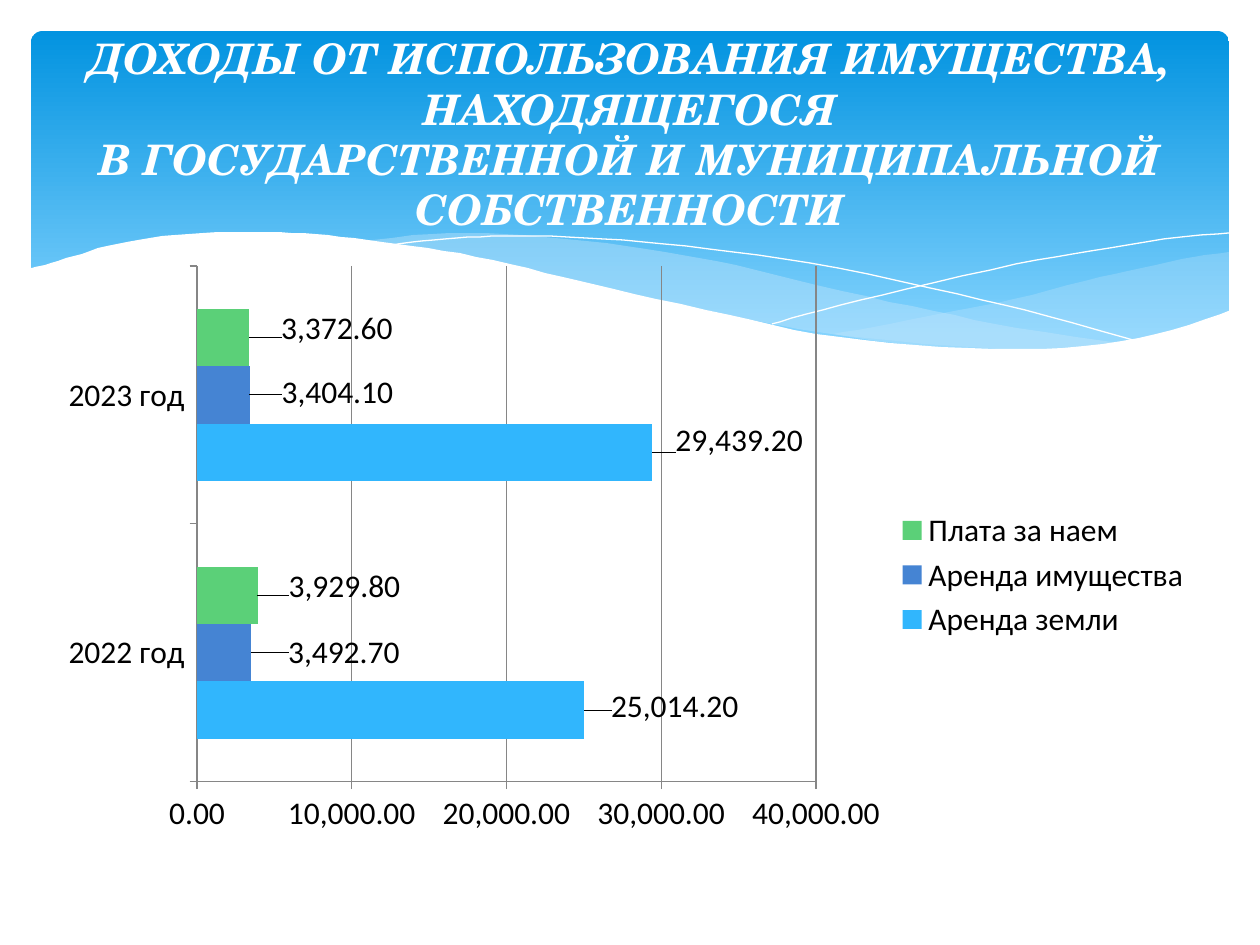
from lxml import etree
from pptx import Presentation
from pptx.chart.data import CategoryChartData
from pptx.dml.color import RGBColor
from pptx.enum.chart import XL_CHART_TYPE, XL_LABEL_POSITION, XL_LEGEND_POSITION, XL_TICK_MARK
from pptx.enum.shapes import MSO_SHAPE
from pptx.enum.text import MSO_ANCHOR, PP_ALIGN
from pptx.oxml.ns import qn
from pptx.util import Pt

BAR = XL_CHART_TYPE.BAR_CLUSTERED
OUTSIDE_END = XL_LABEL_POSITION.OUTSIDE_END
LEGEND_RIGHT = XL_LEGEND_POSITION.RIGHT
TICK_OUTSIDE = XL_TICK_MARK.OUTSIDE
ROUNDED = MSO_SHAPE.ROUNDED_RECTANGLE
MIDDLE = MSO_ANCHOR.MIDDLE
CENTER = PP_ALIGN.CENTER

PX = 914400 // 126
COLORS = {
    "banner_top": "0293E0", "banner_bottom": "83D3FE", "wave": "C6E7FC",
    "white": "FFFFFF", "text": "000000", "axis": "868686",
    "land": "31B6FD", "property": "4584D3", "rent": "5BD078",
}
TITLE = [
    "ДОХОДЫ ОТ ИСПОЛЬЗОВАНИЯ ИМУЩЕСТВА, НАХОДЯЩЕГОСЯ",
    "В ГОСУДАРСТВЕННОЙ И МУНИЦИПАЛЬНОЙ СОБСТВЕННОСТИ",
]
YEARS = ["2022 год", "2023 год"]
NUMBER_FORMAT = "#,##0.00"
SERIES = [
    ("Аренда земли", "land", [25014.2, 29439.2], [(22, -4), (18, -12)]),
    ("Аренда имущества", "property", [3492.7, 3404.1], [(32, 0), (27, -3)]),
    ("Плата за наем", "rent", [3929.8, 3372.6], [(26, -9), (27, -9)]),
]
CHART = (44, 254, 1170, 590)
PLOT = (197, 266, 619, 516)
LEGEND = (895, 505, 296, 140)

RIGHT_WAVE = [
    [(1229, 252), (1194, 257), (1142, 268), (1085, 281), (1014, 299), (949, 312),
     (890, 324), (833, 334)],
    [(833, 334), (906, 342), (969, 347), (1026, 350), (1077, 348), (1130, 342),
     (1178, 330), (1229, 311)],
]
MIDDLE_WAVE = [
    [(1125, 344), (1017, 328), (934, 311), (842, 291), (736, 265), (665, 252),
     (586, 241), (503, 234), (433, 234), (360, 241)],
    [(360, 241), (431, 251), (509, 266), (566, 280), (668, 302), (757, 321),
     (838, 335), (911, 345), (974, 349), (1030, 350), (1080, 348), (1125, 344)],
]
FALLING_LINE = [
    [(389, 246), (413, 242), (457, 238), (505, 236), (567, 237), (643, 242),
     (733, 252), (838, 268), (958, 294), (1047, 316), (1143, 343)],
]
RISING_LINE = [
    [(772, 324), (823, 310), (907, 289), (1016, 264), (1091, 251), (1164, 239),
     (1229, 233)],
]
WHITE_WAVE = [
    [(1231, 310), (1172, 330), (1103, 344), (1019, 349), (915, 345), (816, 334),
     (730, 315), (634, 294), (563, 277), (493, 260), (428, 248), (368, 240),
     (315, 234), (266, 232), (203, 233), (150, 238), (107, 246), (74, 256),
     (45, 265), (29, 268)],
    [(29, 415), (1231, 415)],
]
WAVES = [
    (RIGHT_WAVE, "wave", 29),
    (MIDDLE_WAVE, "wave", 40),
    (FALLING_LINE, None, None),
    (RISING_LINE, None, None),
    (WHITE_WAVE, "white", 100),
]


def color(name):
    return RGBColor.from_string(COLORS[name])


def box(bounds):
    return [value * PX for value in bounds]


def smooth(points, steps=4):
    padded = [points[0], *points, points[-1]]
    result = [points[0]]
    for a, b, c, d in zip(padded, padded[1:], padded[2:], padded[3:]):
        for step in range(1, steps + 1):
            t = step / steps
            result.append(tuple(
                (2 * q + (r - p) * t + (2 * p - 5 * q + 4 * r - s) * t ** 2
                 + (3 * q - p - 3 * r + s) * t ** 3) / 2
                for p, q, r, s in zip(a, b, c, d)))
    return result


def add_banner(slide):
    shape = slide.shapes.add_shape(ROUNDED, *box((31, 31, 1198, 340)))
    shape.adjustments[0] = 0.034
    shape.shadow.inherit = False
    shape.line.fill.background()
    shape.fill.gradient()
    shape.fill.gradient_angle = 270
    stops = shape.fill.gradient_stops
    for stop, name, position in zip(stops, ("banner_top", "banner_bottom"), (0, 0.9)):
        stop.color.rgb = color(name)
        stop.position = position


def add_wave(slide, curves, fill, opacity):
    points = [point for curve in curves for point in smooth(curve)]
    builder = slide.shapes.build_freeform(*points[0], scale=PX)
    builder.add_line_segments(points[1:], close=fill is not None)
    shape = builder.convert_to_shape()
    shape.shadow.inherit = False
    if fill is None:
        shape.fill.background()
        shape.line.color.rgb = color("white")
        shape.line.width = Pt(0)
        return
    shape.line.fill.background()
    shape.fill.solid()
    shape.fill.fore_color.rgb = color(fill)
    if opacity < 100:
        rgb = shape._element.spPr.find(".//" + qn("a:srgbClr"))
        etree.SubElement(rgb, qn("a:alpha")).set("val", str(opacity * 1000))


def make_layout(values, target=None):
    layout = etree.Element(qn("c:layout"))
    manual = etree.SubElement(layout, qn("c:manualLayout"))
    if target:
        etree.SubElement(manual, qn("c:layoutTarget")).set("val", target)
    if len(values) == 4:
        for tag in ("c:xMode", "c:yMode"):
            etree.SubElement(manual, qn(tag)).set("val", "edge")
    for tag, value in zip(("c:x", "c:y", "c:w", "c:h"), values):
        etree.SubElement(manual, qn(tag)).set("val", f"{value:.4f}")
    return layout


def chart_share(bounds):
    left, top, width, height = CHART
    x, y, w, h = bounds
    return (x - left) / width, (y - top) / height, w / width, h / height


def replace_layout(parent, layout, index):
    for old in parent.findall(qn("c:layout")):
        parent.remove(old)
    parent.insert(index, layout)


def add_income_chart(slide):
    data = CategoryChartData(number_format=NUMBER_FORMAT)
    data.categories = YEARS
    for name, _, values, _ in SERIES:
        data.add_series(name, values)
    chart = slide.shapes.add_chart(BAR, *box(CHART), data).chart
    chart.has_title = False
    chart.font.name = "Calibri"
    chart.font.size = Pt(18)
    chart.font.color.rgb = color("text")

    for axis in (chart.category_axis, chart.value_axis):
        axis.major_tick_mark = TICK_OUTSIDE
        axis.format.line.color.rgb = color("axis")
    axis = chart.value_axis
    axis.minimum_scale, axis.maximum_scale, axis.major_unit = 0, 40000, 10000
    axis.tick_labels.number_format = NUMBER_FORMAT
    axis.tick_labels.number_format_is_linked = False
    axis.has_major_gridlines = True
    axis.major_gridlines.format.line.color.rgb = color("axis")

    plot = chart.plots[0]
    plot.gap_width = 150
    plot.vary_by_categories = False
    for series, (_, fill, _, offsets) in zip(plot.series, SERIES):
        series.format.fill.solid()
        series.format.fill.fore_color.rgb = color(fill)
        labels = series.data_labels
        labels.show_value = True
        labels.number_format = NUMBER_FORMAT
        labels.number_format_is_linked = False
        for index in range(len(offsets)):
            series.points[index].data_label.position = OUTSIDE_END
        for label, (dx, dy) in zip(labels._element.findall(qn("c:dLbl")), offsets):
            replace_layout(label, make_layout((dx / CHART[2], dy / CHART[3])), 1)

    chart.has_legend = True
    chart.legend.position = LEGEND_RIGHT
    chart.legend.include_in_layout = False
    replace_layout(chart.legend._element, make_layout(chart_share(LEGEND)), 1)
    plot_area = chart._chartSpace.find(".//" + qn("c:plotArea"))
    replace_layout(plot_area, make_layout(chart_share(PLOT), "inner"), 0)


def add_title(slide):
    frame = slide.shapes.add_textbox(*box((63, 47, 1134, 173))).text_frame
    frame.word_wrap = True
    frame.vertical_anchor = MIDDLE
    paragraph = frame.paragraphs[0]
    paragraph.alignment = CENTER
    for index, line in enumerate(TITLE):
        if index:
            paragraph.add_line_break()
        run = paragraph.add_run()
        run.text = line
        run.font.name = "TeX Gyre Schola"
        run.font.size = Pt(24)
        run.font.bold = run.font.italic = True
        run.font.color.rgb = color("white")


def main():
    presentation = Presentation()
    presentation.slide_width, presentation.slide_height = box((1260, 945))
    slide = presentation.slides.add_slide(presentation.slide_layouts[6])
    add_banner(slide)
    for wave in WAVES:
        add_wave(slide, *wave)
    add_income_chart(slide)
    add_title(slide)
    presentation.save("out.pptx")


if __name__ == "__main__":
    main()
